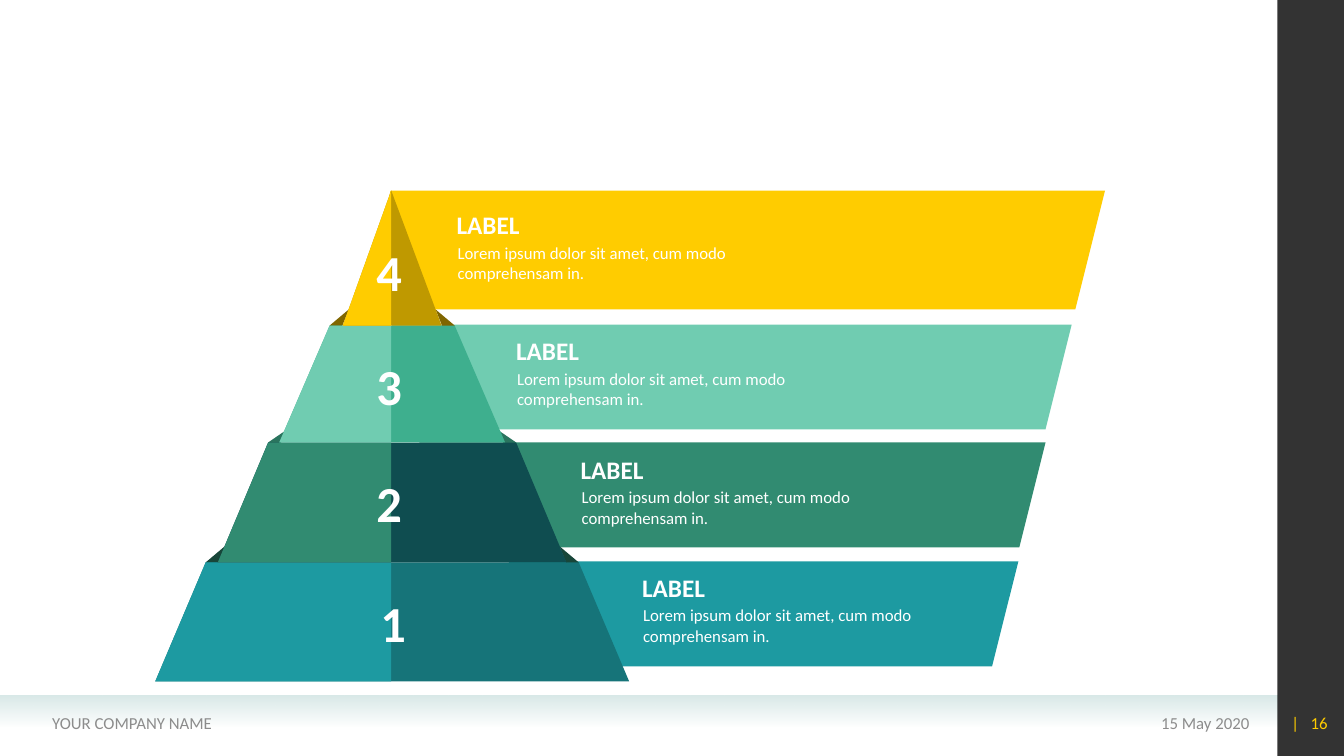
from lxml.etree import SubElement
from pptx import Presentation
from pptx.dml.color import RGBColor
from pptx.enum.shapes import MSO_SHAPE as Geo
from pptx.enum.text import MSO_ANCHOR as Anchor, PP_ALIGN as Align
from pptx.oxml.ns import qn
from pptx.util import Inches, Pt

BODY = "Lorem ipsum dolor sit amet, cum modo comprehensam in."
MID, SPLIT = 3.89, 3.88
TIERS = [
    dict(num="1", top=5.58, base=6.76, near=1.85, far=2.35,
         light="1D9AA1", dark="167479", fold="184639", rise=0.16,
         bar=(4.79, 5.57, 5.31, 1.04), text=(6.27, 5.63), spot=(3.67, 5.82)),
    dict(num="2", top=4.39, base=5.58, near=1.23, far=1.73,
         light="318B71", dark="0F4D50", fold="2A745E", rise=0.13,
         bar=(3.9, 4.39, 6.47, 1.04), text=(5.66, 4.46), spot=(3.63, 4.63)),
    dict(num="3", top=3.23, base=4.39, near=0.62, far=1.12,
         light="70CCB1", dark="3EAF8E", fold="806600", rise=0.16,
         bar=(3.63, 3.22, 7, 1.04), text=(5.02, 3.28), spot=(3.63, 3.47)),
    dict(num="4", top=1.89, base=3.23, near=0, far=0.49,
         light="FFCC00", dark="BF9900", fold=None, rise=0,
         bar=(3.58, 1.89, 7.38, 1.18), text=(4.43, 2.03), spot=(3.63, 2.34)),
]


def tint(code):
    return RGBColor.from_string(code)


def fade(shape, index, share):
    node = list(shape.element.spPr.iter(qn("a:srgbClr")))[index]
    SubElement(node, qn("a:alpha")).set("val", str(share * 1000))


def paint(shape, code):
    shape.shadow.inherit = False
    shape.line.fill.background()
    shape.fill.solid()
    shape.fill.fore_color.rgb = tint(code)
    return shape


def block(slide, kind, box, code):
    shape = slide.shapes.add_shape(kind, *map(Inches, box))
    return paint(shape, code)


def outline(slide, points, code):
    spots = [(Inches(x), Inches(y)) for x, y in points]
    pen = slide.shapes.build_freeform(*spots[0])
    pen.add_line_segments(spots[1:], close=True)
    paint(pen.convert_to_shape(), code)


def write(slide, box, text, size, code="FFFFFF", bold=False,
          align=Align.LEFT, anchor=Anchor.MIDDLE, pitch=None):
    frame = slide.shapes.add_textbox(*map(Inches, box)).text_frame
    frame.word_wrap = True
    frame.vertical_anchor = anchor
    para = frame.paragraphs[0]
    para.alignment = align
    if pitch:
        para.line_spacing = Pt(pitch)
    run = para.add_run()
    run.text = text
    font = run.font
    font.name, font.size, font.bold = "Calibri", Pt(size), bold
    font.color.rgb = tint(code)
    return para


def footer(slide, left, top, width):
    band = block(slide, Geo.RECTANGLE, (left, top, width, 0.31), "D9E9E8")
    band.fill.gradient()
    band.fill.gradient_angle = 270
    for stop in band.fill.gradient_stops:
        stop.color.rgb = tint("D9E9E8")
    fade(band, 1, 0)
    row = top + 0.07
    write(slide, (left + 9.1, row, 3.39, 0.4), "15 May 2020", 12, "8C8C8C",
          align=Align.RIGHT)
    write(slide, (left + 0.42, row, 4.9, 0.4), "YOUR COMPANY NAME", 12, "8C8C8C")


def side(slide, left, top, width, height):
    block(slide, Geo.RECTANGLE, (left, top, width, height), "000000")
    fade(slide.shapes[-1], 0, 80)
    para = write(slide, (left + 0.04, top + 6.97, 0.56, 0.4), "|\t16", 12, "FFCC00")
    stops = SubElement(para._p.get_or_add_pPr(), qn("a:tabLst"))
    tab = SubElement(stops, qn("a:tab"))
    tab.set("pos", str(Inches(0.19)))
    tab.set("algn", "l")


def fold(slide, tier):
    top, half = tier["top"], tier["near"]
    edge = [(half - 0.11, top + 0.04), (half - 0.19, top - tier["rise"]),
            (half, top), (half - 0.06, top + 0.1)]
    left = [(MID - x, y) for x, y in edge]
    right = [(MID + x, y) for x, y in reversed(edge)]
    outline(slide, left + right, tier["fold"])


def face(slide, tier):
    top, base = tier["top"], tier["base"]
    near, far = tier["near"], tier["far"]
    peak = MID if near else SPLIT
    outline(slide, [(peak - near, top), (peak + near, top),
                    (MID + far, base), (MID - far, base)], tier["dark"])
    outline(slide, [(peak - near, top), (SPLIT, top),
                    (SPLIT, base), (MID - far, base)], tier["light"])


def label(slide, left, top):
    write(slide, (left + 0.01, top + 0.32, 3.54, 0.5), BODY, 12,
          anchor=Anchor.TOP, pitch=14.7)
    write(slide, (left, top, 0.97, 0.4), "LABEL", 18, bold=True)


def pyramid(slide):
    for tier in TIERS:
        block(slide, Geo.PARALLELOGRAM, tier["bar"], tier["light"])
    for tier in TIERS:
        if tier["fold"]:
            fold(slide, tier)
    for tier in TIERS:
        face(slide, tier)
    for tier in TIERS:
        label(slide, *tier["text"])
        write(slide, (*tier["spot"], 0.46, 0.71), tier["num"], 36,
              bold=True, align=Align.CENTER)


def main():
    deck = Presentation()
    deck.slide_width, deck.slide_height = Inches(13.33), Inches(7.5)
    slide = deck.slides.add_slide(deck.slide_layouts[6])
    footer(slide, 0, 6.9, 12.67)
    side(slide, 12.67, 0, 0.66, 7.5)
    pyramid(slide)
    deck.save("out.pptx")


if __name__ == "__main__":
    main()
